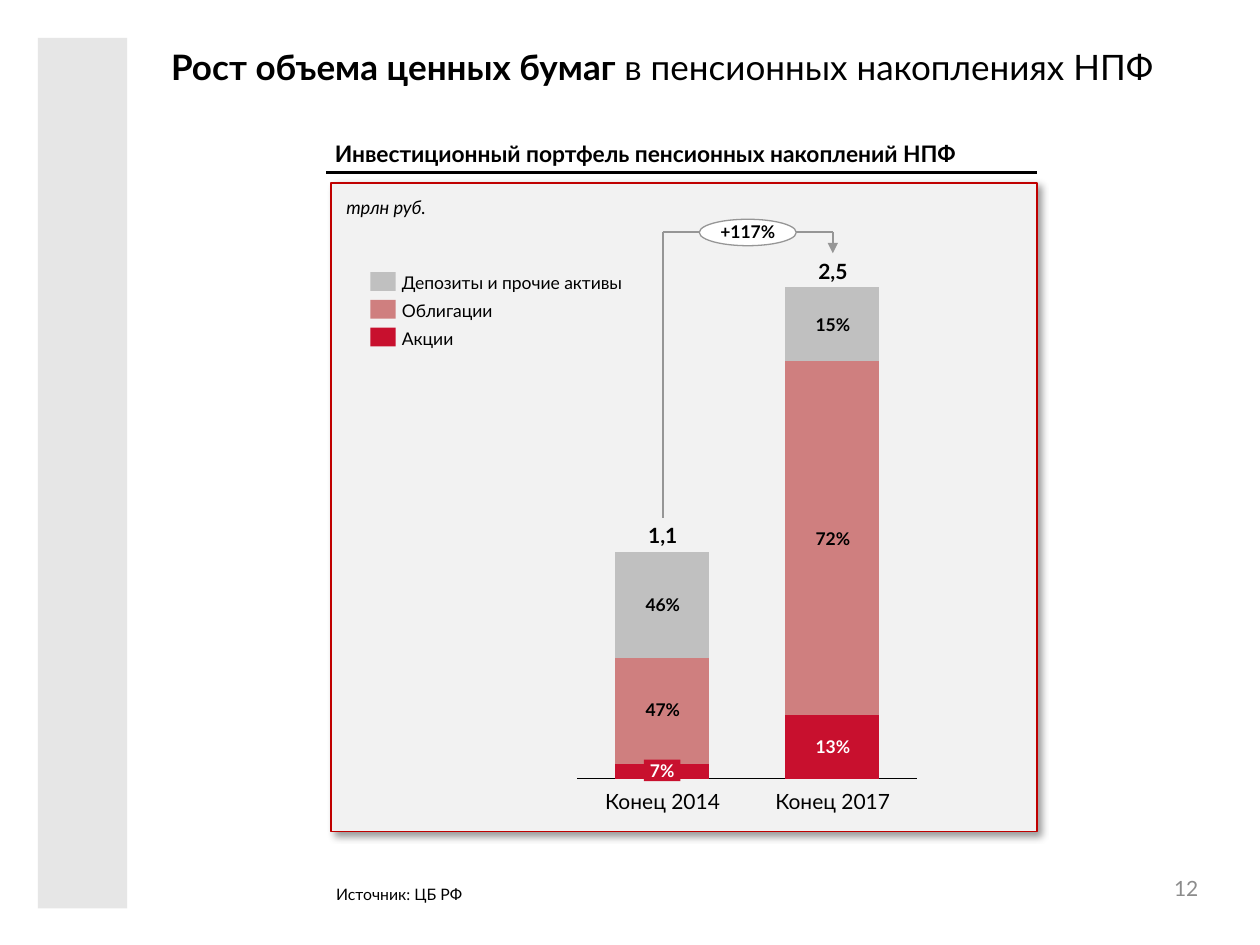
from dataclasses import dataclass

from lxml import etree
from pptx import Presentation
from pptx.chart.data import CategoryChartData
from pptx.dml.color import RGBColor
from pptx.enum import chart as charts, shapes, text
from pptx.oxml import ns, parse_xml
from pptx.util import Inches, Pt

FONT = "Lato"
BLACK = RGBColor(0x00, 0x00, 0x00)
WHITE = RGBColor(0xFF, 0xFF, 0xFF)
SIDEBAR = RGBColor(0xE6, 0xE6, 0xE6)
PANEL = RGBColor(0xF2, 0xF2, 0xF2)
FRAME = RGBColor(0xC0, 0x00, 0x00)
GREY = RGBColor(0x96, 0x96, 0x96)
NUMBER = RGBColor(0x8C, 0x8C, 0x8C)
RED = RGBColor(0xC8, 0x10, 0x2E)
PINK = RGBColor(0xCF, 0x7F, 0x7F)
SILVER = RGBColor(0xC0, 0xC0, 0xC0)

LEFT, CENTER, RIGHT = text.PP_ALIGN.LEFT, text.PP_ALIGN.CENTER, text.PP_ALIGN.RIGHT
TOP, MIDDLE, BOTTOM = (text.MSO_ANCHOR.TOP, text.MSO_ANCHOR.MIDDLE,
                       text.MSO_ANCHOR.BOTTOM)
RECTANGLE, OVAL = shapes.MSO_SHAPE.RECTANGLE, shapes.MSO_SHAPE.OVAL
NO_INSET = (0, 0, 0, 0)
LABEL_INSET = (0.02, 0, 0.02, 0)
TEXT_INSET = (0.1, 0.05, 0.1, 0.05)

# Centres of the two columns
COLUMN_2014, COLUMN_2017 = 5.26, 6.61


@dataclass
class Style:
    size: float
    color: RGBColor = BLACK
    bold: bool = False
    italic: bool = False
    align: text.PP_ALIGN = LEFT
    anchor: text.MSO_ANCHOR = TOP
    inset: tuple = TEXT_INSET
    wrap: bool = True


@dataclass
class Label:
    words: str
    center: float
    top: float
    width: float
    height: float
    style: Style


@dataclass
class Series:
    name: str
    legend: str
    values: tuple
    color: RGBColor


def write(shape, words: str, style: Style):
    frame = shape.text_frame
    frame.text = words
    frame.word_wrap = style.wrap
    frame.vertical_anchor = style.anchor
    (frame.margin_left, frame.margin_top,
     frame.margin_right, frame.margin_bottom) = map(Inches, style.inset)
    para = frame.paragraphs[0]
    para.alignment = style.align
    for span in para.runs:
        font = span.font
        font.name, font.size, font.color.rgb = FONT, Pt(style.size), style.color
        font.bold, font.italic = style.bold, style.italic
    return para


def add_text(page, words: str, left: float, top: float, width: float,
             height: float, style: Style):
    box = page.shapes.add_textbox(*map(Inches, (left, top, width, height)))
    return write(box, words, style)


def add_label(page, label: Label):
    add_text(page, label.words, label.center - label.width / 2, label.top,
             label.width, label.height, label.style)


def add_block(page, kind, left: float, top: float, width: float, height: float,
              fill: RGBColor, line: RGBColor | None = None, weight: float = 1):
    block = page.shapes.add_shape(kind, *map(Inches, (left, top, width, height)))
    block.shadow.inherit = False
    block.fill.solid()
    block.fill.fore_color.rgb = fill
    if line is None:
        block.line.fill.background()
    else:
        block.line.color.rgb, block.line.width = line, Pt(weight)
    return block


def add_line(page, start: tuple, end: tuple, color: RGBColor, weight: float,
             arrow: bool = False):
    line = page.shapes.add_connector(shapes.MSO_CONNECTOR.STRAIGHT,
                                     *map(Inches, start + end))
    line.line.color.rgb, line.line.width = color, Pt(weight)
    if arrow:
        outline = line.element.spPr.find(ns.qn("a:ln"))
        etree.SubElement(outline, ns.qn("a:tailEnd"), type="triangle")
    etree.SubElement(line.element.spPr, ns.qn("a:effectLst"))


def add_panel(page):
    panel = add_block(page, RECTANGLE, 2.63, 1.45, 5.6, 5.15, PANEL, FRAME)
    effects = panel.element.spPr.find(ns.qn("a:effectLst"))
    effects.append(parse_xml(
        f'<a:outerShdw {ns.nsdecls("a")} blurRad="{Pt(4)}" dist="{Pt(3)}" '
        'dir="2700000" algn="tl" rotWithShape="0"><a:srgbClr val="000000">'
        '<a:alpha val="40000"/></a:srgbClr></a:outerShdw>'))


def add_columns(page, series_list: list):
    data = CategoryChartData()
    data.categories = ["1", "2"]
    for series in series_list:
        data.add_series(series.name, series.values)
    chart = page.shapes.add_chart(
        charts.XL_CHART_TYPE.COLUMN_STACKED,
        *map(Inches, (4.49, 2.19, 2.88, 4.08)), data).chart
    chart.has_legend = chart.has_title = False
    chart.font.name, chart.font.size, chart.font.color.rgb = FONT, Pt(10), BLACK
    plot = chart.plots[0]
    plot.gap_width, plot.overlap, plot.vary_by_categories = 80, 100, False
    for drawn, series in zip(plot.series, series_list):
        drawn.format.fill.solid()
        drawn.format.fill.fore_color.rgb = series.color

    bottom = chart.category_axis
    bottom.tick_label_position = charts.XL_TICK_LABEL_POSITION.NONE
    bottom.major_tick_mark = bottom.minor_tick_mark = charts.XL_TICK_MARK.NONE
    bottom.format.line.color.rgb, bottom.format.line.width = BLACK, Pt(0.75)
    scale = chart.value_axis
    scale.minimum_scale, scale.maximum_scale = 0, 139
    scale.has_major_gridlines = scale.visible = False

    # Fixed inner plot area
    area = chart.element.find(".//" + ns.qn("c:plotArea"))
    for old in area.findall(ns.qn("c:layout")):
        area.remove(old)
    layout = etree.Element(ns.qn("c:layout"))
    manual = etree.SubElement(layout, ns.qn("c:manualLayout"))
    for tag, value in (("layoutTarget", "inner"), ("xMode", "edge"), ("yMode", "edge"),
                       ("x", "0.031"), ("y", "0.022"), ("w", "0.937"), ("h", "0.956")):
        etree.SubElement(manual, ns.qn(f"c:{tag}"), val=value)
    area.insert(0, layout)


def main():
    deck = Presentation()
    deck.slide_width, deck.slide_height = Inches(10), Inches(7.5)
    page = deck.slides.add_slide(deck.slide_layouts[6])

    # Sidebar, panel, title and page number
    add_block(page, RECTANGLE, 0.3, 0.3, 0.71, 6.91, SIDEBAR)
    add_panel(page)
    title = add_text(page, "Рост объема ценных бумаг ", 1.26, 0.31, 8.58, 0.83,
                     Style(20, bold=True))
    rest = title.add_run()
    rest.text = "в пенсионных накоплениях НПФ"
    rest.font.name, rest.font.size, rest.font.color.rgb = FONT, Pt(20), BLACK
    add_text(page, "12", 7.28, 6.85, 2.33, 0.4,
             Style(12, NUMBER, align=RIGHT, anchor=MIDDLE))

    # Stacked columns, listed from the bottom up
    series_list = [
        Series("Series 1", "Акции", (4, 18), RED),
        Series("Series 2", "Облигации", (30, 100), PINK),
        Series("Series 3", "Депозиты и прочие активы", (30, 21), SILVER),
    ]
    add_columns(page, series_list)

    # Growth bracket
    corners = [(COLUMN_2014, 4.11), (COLUMN_2014, 1.84),
               (COLUMN_2017, 1.84), (COLUMN_2017, 2.01)]
    for start, end in zip(corners, corners[1:]):
        add_line(page, start, end, GREY, 1, arrow=end == corners[-1])
    share = Style(10, bold=True, align=CENTER, anchor=MIDDLE,
                  inset=LABEL_INSET, wrap=False)
    light = Style(10, WHITE, True, align=CENTER, anchor=MIDDLE,
                  inset=LABEL_INSET, wrap=False)
    growth = add_block(page, OVAL, 5.55, 1.74, 0.77, 0.21, WHITE, GREY, 0.75)
    write(growth, "+117%", Style(10, bold=True, align=CENTER, anchor=MIDDLE,
                                 inset=NO_INSET, wrap=False)).line_spacing = 0.9

    # Shares, totals and column names
    total = Style(12, bold=True, align=CENTER, anchor=BOTTOM,
                  inset=LABEL_INSET, wrap=False)
    name = Style(12, align=CENTER, inset=NO_INSET, wrap=False)
    for label in (
        Label("13%", COLUMN_2017, 5.84, 0.38, 0.17, light),
        Label("72%", COLUMN_2017, 4.19, 0.38, 0.17, share),
        Label("15%", COLUMN_2017, 2.49, 0.38, 0.17, share),
        Label("47%", COLUMN_2014, 5.55, 0.38, 0.17, share),
        Label("46%", COLUMN_2014, 4.71, 0.38, 0.17, share),
        Label("1,1", COLUMN_2014, 4.15, 0.31, 0.2, total),
        Label("2,5", COLUMN_2017, 2.05, 0.31, 0.2, total),
        Label("Конец 2014", COLUMN_2014, 6.26, 1, 0.2, name),
        Label("Конец 2017", COLUMN_2017, 6.26, 1, 0.2, name),
    ):
        add_label(page, label)
    write(add_block(page, RECTANGLE, 5.11, 6.03, 0.29, 0.17, RED), "7%", light)

    # Legend, listed from the top down
    entry = Style(10, anchor=MIDDLE, inset=NO_INSET, wrap=False)
    for row, series in enumerate(reversed(series_list)):
        top = 2.16 + 0.22 * row
        add_block(page, RECTANGLE, 2.94, top, 0.2, 0.15, series.color)
        add_text(page, series.legend, 3.19, top, 1.85, 0.17, entry)

    # Heading, unit and source
    add_text(page, "трлн руб.", 2.65, 1.51, 1.39, 0.28, Style(10.5, italic=True))
    add_text(page, "Инвестиционный портфель пенсионных накоплений НПФ",
             2.56, 1.06, 6.7, 0.32, Style(13, bold=True)).space_after = Pt(6)
    add_line(page, (2.59, 1.37), (8.23, 1.37), BLACK, 1.5)
    add_text(page, "Источник: ЦБ РФ", 2.57, 6.97, 6.14, 0.25, Style(9))

    deck.save("out.pptx")


if __name__ == "__main__":
    main()
